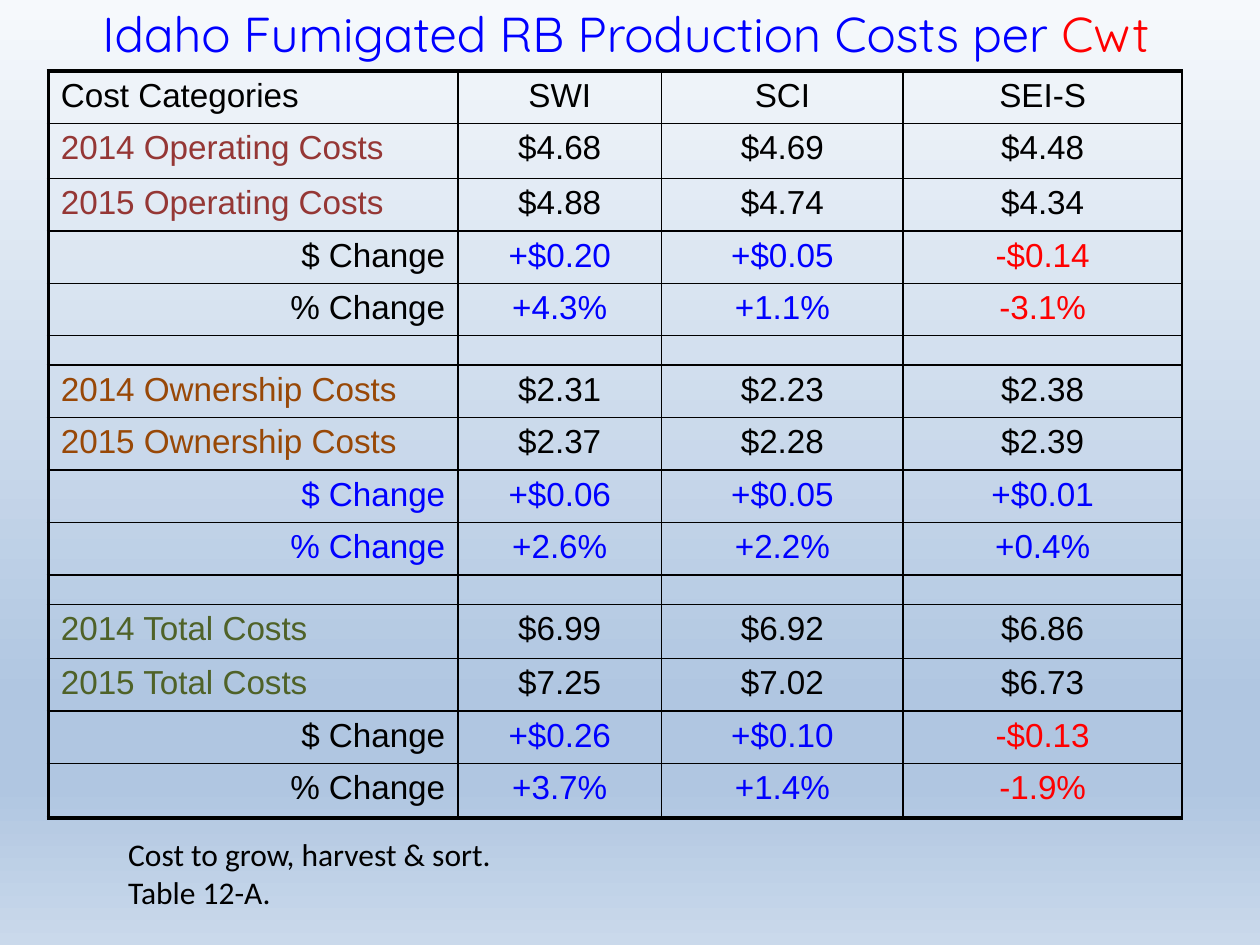
from dataclasses import dataclass

from lxml import etree
from pptx import Presentation
from pptx.dml.color import RGBColor
from pptx.enum.text import MSO_ANCHOR, MSO_AUTO_SIZE, PP_ALIGN
from pptx.oxml.ns import qn
from pptx.util import Pt

LEFT, CENTER, RIGHT = PP_ALIGN.LEFT, PP_ALIGN.CENTER, PP_ALIGN.RIGHT
TOP = MSO_ANCHOR.TOP
FIXED_SIZE = MSO_AUTO_SIZE.NONE
TITLE_ONLY = 5


@dataclass(frozen=True)
class Theme:
    title_font: str = "Quicksand"
    table_font: str = "Arial"
    note_font: str = "Calibri"
    title_size: float = 28
    table_size: float = 19
    spacer_size: float = 7
    note_size: float = 18
    black: str = "000000"
    gain: str = "0000FF"
    loss: str = "FF0000"
    operating: str = "953735"
    ownership: str = "984807"
    total: str = "4F6228"
    thin: float = 1
    thick: float = 2.25
    background: tuple = ((0, "F6F9FC"), (74, "B0C6E1"), (83, "B0C6E1"), (100, "CAD9EB"))


THEME = Theme()

HEADINGS = ["Cost Categories", "SWI", "SCI", "SEI-S"]
COST_GROUPS = [
    ("Operating", THEME.operating, THEME.black, [
        ["$4.68", "$4.69", "$4.48"],
        ["$4.88", "$4.74", "$4.34"],
        ["+$0.20", "+$0.05", "-$0.14"],
        ["+4.3%", "+1.1%", "-3.1%"],
    ]),
    ("Ownership", THEME.ownership, THEME.gain, [
        ["$2.31", "$2.23", "$2.38"],
        ["$2.37", "$2.28", "$2.39"],
        ["+$0.06", "+$0.05", "+$0.01"],
        ["+2.6%", "+2.2%", "+0.4%"],
    ]),
    ("Total", THEME.total, THEME.black, [
        ["$6.99", "$6.92", "$6.86"],
        ["$7.25", "$7.02", "$6.73"],
        ["+$0.26", "+$0.10", "-$0.13"],
        ["+3.7%", "+1.4%", "-1.9%"],
    ]),
]
COLUMN_WIDTHS = [234, 116.5, 138, 159.5]
ROW_HEIGHT = 30
SPACER_HEIGHT = 16.8
TALL_ROWS = {1: 31.4, 11: 31, 14: 31}


def format_span(span, font, size, color):
    span.font.name = font
    span.font.size = Pt(size)
    span.font.color.rgb = RGBColor.from_string(color)


def paint_background(slide):
    slide.background.fill.gradient()
    gradient = next(slide.element.iter(qn("a:gradFill")))
    stops = gradient.find(qn("a:gsLst"))
    for stop in list(stops):
        stops.remove(stop)
    for position, color in THEME.background:
        stop = etree.SubElement(stops, qn("a:gs"), pos=str(position * 1000))
        etree.SubElement(stop, qn("a:srgbClr"), val=color)
    direction = gradient.find(qn("a:lin"))
    direction.set("ang", "5400000")
    direction.set("scaled", "0")


def add_title(slide, spans):
    box = slide.shapes.title
    box.left, box.top, box.width, box.height = Pt(27.4), Pt(-1.4), Pt(668), Pt(41)
    frame = box.text_frame
    frame.auto_size = FIXED_SIZE
    frame.vertical_anchor = TOP
    para = frame.paragraphs[0]
    para.alignment = CENTER
    for text, color in spans:
        span = para.add_run()
        span.text = text
        format_span(span, THEME.title_font, THEME.title_size, color)


def add_note(slide, text):
    box = slide.shapes.add_textbox(Pt(66.2), Pt(473.8), Pt(257.8), Pt(51))
    frame = box.text_frame
    frame.word_wrap = True
    para = frame.paragraphs[0]
    para.text = text
    for span in para.runs:
        format_span(span, THEME.note_font, THEME.note_size, THEME.black)


def draw_borders(cell, widths):
    properties = cell._tc.get_or_add_tcPr()
    for side, width in zip("LRTB", widths):
        line = etree.SubElement(properties, qn(f"a:ln{side}"), w=str(int(Pt(width))))
        fill = etree.SubElement(line, qn("a:solidFill"))
        etree.SubElement(fill, qn("a:srgbClr"), val=THEME.black)


def fill_cell(cell, text, color, alignment):
    para = cell.text_frame.paragraphs[0]
    para.alignment = alignment
    if text:
        para.text = text
        format_span(para.runs[0], THEME.table_font, THEME.table_size, color)
    else:
        size = str(int(THEME.spacer_size * 100))
        etree.SubElement(para._p, qn("a:endParaRPr"), sz=size)


def value_color(text):
    return {"+": THEME.gain, "-": THEME.loss}.get(text[:1], THEME.black)


def cost_rows():
    rows = [(HEADINGS, THEME.black, LEFT)]
    for name, name_color, change_color, values in COST_GROUPS:
        if len(rows) > 1:
            rows.append(([""] * len(HEADINGS), THEME.black, LEFT))
        labels = [
            (f"2014 {name} Costs", name_color, LEFT),
            (f"2015 {name} Costs", name_color, LEFT),
            ("$ Change", change_color, RIGHT),
            ("% Change", change_color, RIGHT),
        ]
        for (label, color, alignment), amounts in zip(labels, values):
            rows.append(([label, *amounts], color, alignment))
    return rows


def add_cost_table(slide):
    rows = cost_rows()
    last = len(rows) - 1
    frame = slide.shapes.add_table(
        len(rows), len(HEADINGS), Pt(27.6), Pt(40.5), Pt(sum(COLUMN_WIDTHS)), Pt(428)
    )
    table = frame.table
    table.first_row = False
    table.horz_banding = False
    for column, width in zip(table.columns, COLUMN_WIDTHS):
        column.width = Pt(width)
    for r, (texts, label_color, label_alignment) in enumerate(rows):
        normal = ROW_HEIGHT if texts[0] else SPACER_HEIGHT
        table.rows[r].height = Pt(TALL_ROWS.get(r, normal))
        for c, text in enumerate(texts):
            cell = table.cell(r, c)
            outer_edges = (c == 0, False, r == 0, r == last)
            draw_borders(cell, [THEME.thick if edge else THEME.thin for edge in outer_edges])
            cell.fill.background()
            if c == 0:
                fill_cell(cell, text, label_color, label_alignment)
            else:
                fill_cell(cell, text, value_color(text), CENTER)


def main():
    deck = Presentation()
    deck.slide_width, deck.slide_height = Pt(720), Pt(540)
    slide = deck.slides.add_slide(deck.slide_layouts[TITLE_ONLY])
    paint_background(slide)
    add_cost_table(slide)
    add_title(slide, [
        ("Idaho Fumigated RB Production Costs per ", THEME.gain),
        ("Cwt ", THEME.loss),
    ])
    add_note(slide, "Cost to grow, harvest & sort.\vTable 12-A.")
    deck.save("out.pptx")


if __name__ == "__main__":
    main()
